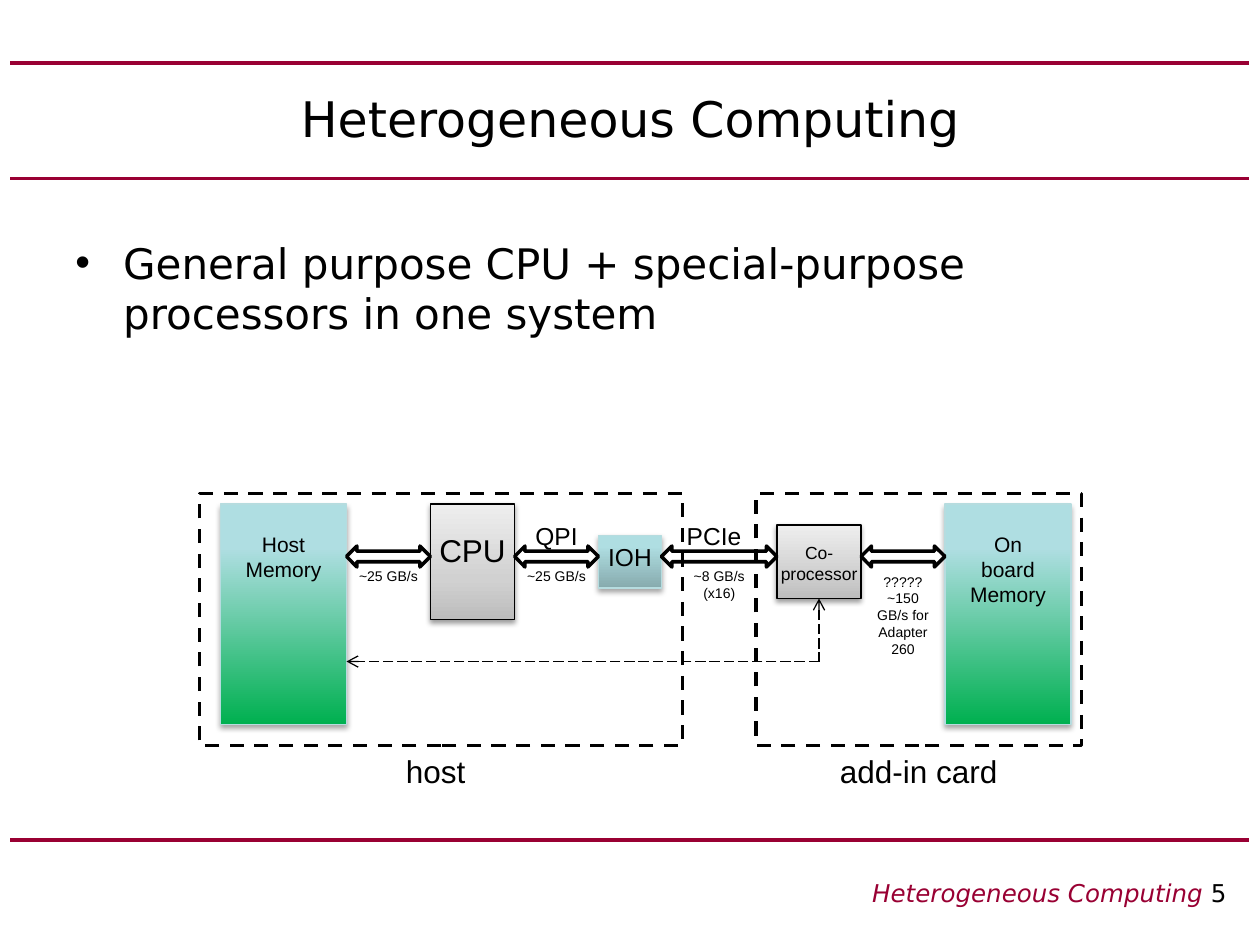
"""Build the Heterogeneous Computing slide on a grid of twelve units per inch."""
from pptx import Presentation
from pptx.dml.color import RGBColor
from pptx.enum.dml import MSO_LINE
from pptx.enum.shapes import MSO_CONNECTOR, MSO_SHAPE
from pptx.enum.text import MSO_ANCHOR, PP_ALIGN
from pptx.oxml import parse_xml
from pptx.oxml.ns import nsdecls, qn
from pptx.util import Inches, Pt

LEFT, CENTER, RIGHT = PP_ALIGN.LEFT, PP_ALIGN.CENTER, PP_ALIGN.RIGHT
TOP, MIDDLE = MSO_ANCHOR.TOP, MSO_ANCHOR.MIDDLE
RECTANGLE, DOUBLE_ARROW = MSO_SHAPE.RECTANGLE, MSO_SHAPE.LEFT_RIGHT_ARROW
STRAIGHT = MSO_CONNECTOR.STRAIGHT
DASH, LONG_DASH = MSO_LINE.DASH, MSO_LINE.LONG_DASH

BLACK = RGBColor(0x00, 0x00, 0x00)
CRIMSON = RGBColor(0x99, 0x00, 0x33)
PALE_TEAL = RGBColor(0xB6, 0xDC, 0xDF)
HEADING_FONT, LABEL_FONT = "DejaVu Sans", "Arial"

TITLE = "Heterogeneous Computing"
BULLET = "General purpose CPU + special-purpose processors in one system"
PAGE_NUMBER = "5"

RULE_ROWS = [6, 17, 80]
STYLES = {
    "processor": ([(0, "BDBDBD"), (35, "D1D1D1"), (100, "EEEEEE")], BLACK, 38, 1.6),
    "chipset": ([(0, "87ABAE"), (80, "AFDEE2"), (100, "AFE0E4")], PALE_TEAL, 35, 1.8),
    "memory": ([(0, "00B050"), (80, "AFDEE2"), (100, "AFE0E4")], PALE_TEAL, 35, 1.8),
}
COMPONENTS = [
    ("memory", (21, 48, 12, 21)),
    ("processor", (41, 48, 8, 11)),
    ("chipset", (57, 51, 6, 5)),
    ("processor", (74, 50, 8, 7)),
    ("memory", (90, 48, 12, 21)),
]
ENCLOSURES = [(19, 47, 46, 24), (72, 47, 31, 24)]
BUS_ROW, BUS_HEIGHT = 52, 2
LABELS = [
    ("Host Memory", (22, 50, 10, 6), 12),
    ("CPU", (40, 50, 10, 5), 18),
    ("IOH", (56, 51, 8, 4), 14),
    ("Co-processor", (73, 51, 10, 5), 10),
    ("On board\nMemory", (91, 50, 10, 8.5), 12),
    ("QPI", (49, 49, 8, 4), 14),
    ("PCIe", (64, 49, 8, 4), 14),
    ("~25 GB/s", (33, 53.5, 8, 4.5), 8),
    ("~25 GB/s", (49, 53.5, 8, 4.5), 8),
    ("~8 GB/s (x16)", (64.5, 53.5, 8, 4.5), 8),
    ("?????\n~150 GB/s for Adapter 260", (82, 54, 8, 9), 8),
    ("host", (32, 71, 19, 5), 18),
    ("add-in card", (78, 71, 19, 5), 18),
]
TRANSFER_PATH = [((78, 57), (78, 63), "headEnd"), ((78, 63), (33, 63), "tailEnd")]


def grid(*units):
    return [Inches(unit / 12) for unit in units]


def add_text(slide, text, area, size, font=LABEL_FONT, align=CENTER, anchor=TOP):
    frame = slide.shapes.add_textbox(*grid(*area)).text_frame
    frame.word_wrap = True
    frame.vertical_anchor = anchor
    frame.text = text
    for paragraph in frame.paragraphs:
        paragraph.alignment = align
        for run in paragraph.runs:
            style_run(run, size, font)
    return frame.paragraphs[0]


def style_run(run, size, font, color=BLACK):
    run.font.size = Pt(size)
    run.font.name = font
    run.font.color.rgb = color


def add_outline(slide, kind, area, color=BLACK, width=2):
    outline = slide.shapes.add_shape(kind, *grid(*area))
    outline.shadow.inherit = False
    outline.fill.background()
    outline.line.color.rgb = color
    outline.line.width = Pt(width)
    return outline


def add_component(slide, style, area):
    stops, border, opacity, distance = STYLES[style]
    component = add_outline(slide, RECTANGLE, area, border, 0.75)
    component.fill.gradient()
    component.fill.gradient_angle = 90
    properties = component._element.spPr
    stop_list = properties.find(".//" + qn("a:gsLst"))
    for stop in list(stop_list):
        stop_list.remove(stop)
    for position, color in stops:
        stop_list.append(parse_xml(
            f'<a:gs {nsdecls("a")} pos="{position * 1000}"><a:srgbClr val="{color}"/></a:gs>'))
    properties.find(qn("a:effectLst")).append(parse_xml(
        f'<a:outerShdw {nsdecls("a")} blurRad="{Pt(3.1)}" dist="{Pt(distance)}" '
        f'dir="5400000" rotWithShape="0"><a:srgbClr val="000000">'
        f'<a:alpha val="{opacity * 1000}"/></a:srgbClr></a:outerShdw>'))


def add_line(slide, start, end, color, width):
    line = slide.shapes.add_connector(STRAIGHT, *grid(*start, *end))
    line.line.color.rgb = color
    line.line.width = Pt(width)
    line._element.spPr.append(parse_xml(f'<a:effectLst {nsdecls("a")}/>'))
    return line


def add_bullet(slide):
    paragraph = add_text(slide, BULLET, (6, 22, 108, 57), 24, HEADING_FONT, LEFT)
    properties = paragraph._p.get_or_add_pPr()
    properties.set("marL", str(Inches(0.38)))
    properties.set("indent", str(-Inches(0.38)))
    properties.append(parse_xml(f'<a:buFont {nsdecls("a")} typeface="Arial"/>'))
    properties.append(parse_xml(f'<a:buChar {nsdecls("a")} char="•"/>'))


def add_footer(slide):
    footer = add_text(slide, TITLE + " ", (45, 83, 73, 4), 14, HEADING_FONT, RIGHT)
    footer.runs[0].font.color.rgb = CRIMSON
    footer.runs[0].font.italic = True
    number = footer.add_run()
    number.text = PAGE_NUMBER
    style_run(number, 14, HEADING_FONT)


def main():
    deck = Presentation()
    deck.slide_width, deck.slide_height = Inches(10), Inches(7.5)
    slide = deck.slides.add_slide(deck.slide_layouts[6])

    for row in RULE_ROWS:
        add_line(slide, (1, row), (119, row), CRIMSON, 2.25)
    add_footer(slide)
    add_text(slide, TITLE, (6, 6, 108, 10.5), 28, HEADING_FONT, anchor=MIDDLE)
    add_bullet(slide)

    for style, area in COMPONENTS:
        add_component(slide, style, area)
    for (_, source), (_, target) in zip(COMPONENTS, COMPONENTS[1:]):
        start = source[0] + source[2]
        add_outline(slide, DOUBLE_ARROW, (start, BUS_ROW, target[0] - start, BUS_HEIGHT))
    for area in ENCLOSURES:
        add_outline(slide, RECTANGLE, area).line.dash_style = DASH
    for start, end, arrow_end in TRANSFER_PATH:
        segment = add_line(slide, start, end, BLACK, 0.75).line
        segment.dash_style = LONG_DASH
        segment._get_or_add_ln().append(
            parse_xml(f'<a:{arrow_end} {nsdecls("a")} type="arrow"/>'))
    for text, area, size in LABELS:
        add_text(slide, text, area, size)

    deck.save("out.pptx")


if __name__ == "__main__":
    main()
